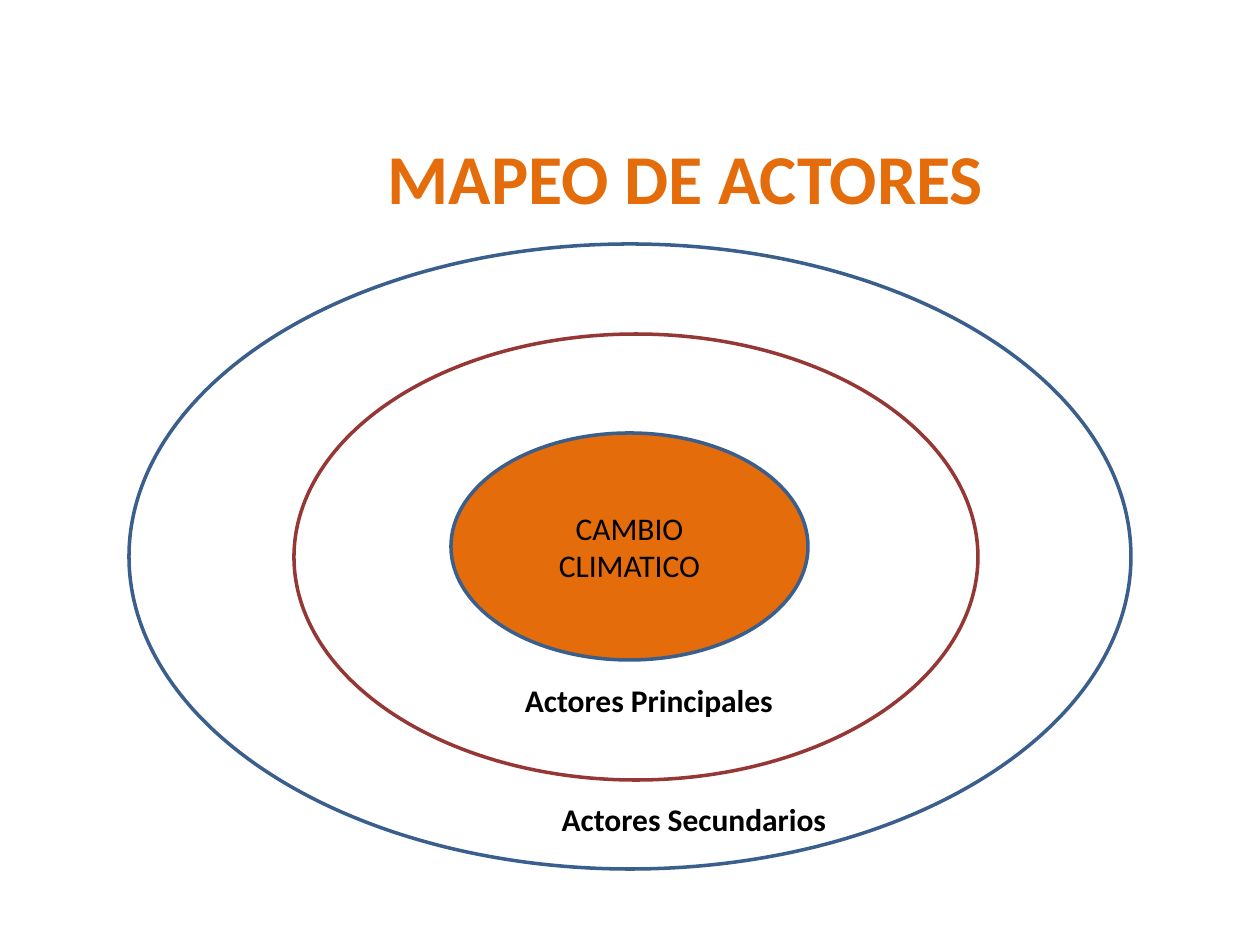
from dataclasses import dataclass

from pptx import Presentation
from pptx.dml.color import RGBColor
from pptx.enum.shapes import MSO_SHAPE as Shape
from pptx.enum.text import MSO_ANCHOR as Anchor, PP_ALIGN as Align
from pptx.util import Inches, Pt

PX = Inches(1) // 126


@dataclass(frozen=True)
class Theme:
    font: str = "Calibri"
    title_size: int = 40
    body_size: int = 18
    line_width: int = 2
    orange: str = "E46C0A"
    blue: str = "3A5F8C"
    red: str = "953735"
    black: str = "000000"


THEME = Theme()


def color(value):
    return RGBColor.from_string(value)


def px(*lengths):
    return [length * PX for length in lengths]


def write(shape, text, size, ink, bold=False, anchor=Anchor.MIDDLE):
    frame = shape.text_frame
    frame.word_wrap = True
    frame.vertical_anchor = anchor
    frame.text = text
    para = frame.paragraphs[0]
    para.alignment = Align.CENTER
    for span in para.runs:
        font = span.font
        font.name = THEME.font
        font.size = Pt(size)
        font.bold = bold
        font.color.rgb = color(ink)


def add_ring(page, bounds, outline, fill=None):
    ring = page.shapes.add_shape(Shape.OVAL, *px(*bounds))
    ring.shadow.inherit = False
    ring.line.color.rgb = color(outline)
    ring.line.width = Pt(THEME.line_width)
    if fill:
        ring.fill.solid()
        ring.fill.fore_color.rgb = color(fill)
    else:
        ring.fill.background()
    return ring


def add_label(page, left, top, text):
    box = page.shapes.add_textbox(*px(left, top, 328, 50))
    write(box, text, THEME.body_size, THEME.black, bold=True, anchor=Anchor.TOP)


def set_title(page, bounds, text):
    title = page.shapes.title
    title.left, title.top, title.width, title.height = px(*bounds)
    write(title, text, THEME.title_size, THEME.orange, bold=True)


def main():
    deck = Presentation()
    deck.slide_width, deck.slide_height = Inches(10), Inches(7.5)
    page = deck.slides.add_slide(deck.slide_layouts[5])

    core = add_ring(page, (451, 433, 357, 227), THEME.blue, THEME.orange)
    write(core, "CAMBIO CLIMATICO", THEME.body_size, THEME.black)
    add_ring(page, (294, 334, 684, 446), THEME.red)
    add_ring(page, (129, 244, 1002, 625), THEME.blue)

    add_label(page, 530, 794, "Actores Secundarios")
    add_label(page, 485, 675, "Actores Principales")
    set_title(page, (184, 111, 1019, 131), "MAPEO DE ACTORES ")

    deck.save("out.pptx")


if __name__ == "__main__":
    main()
